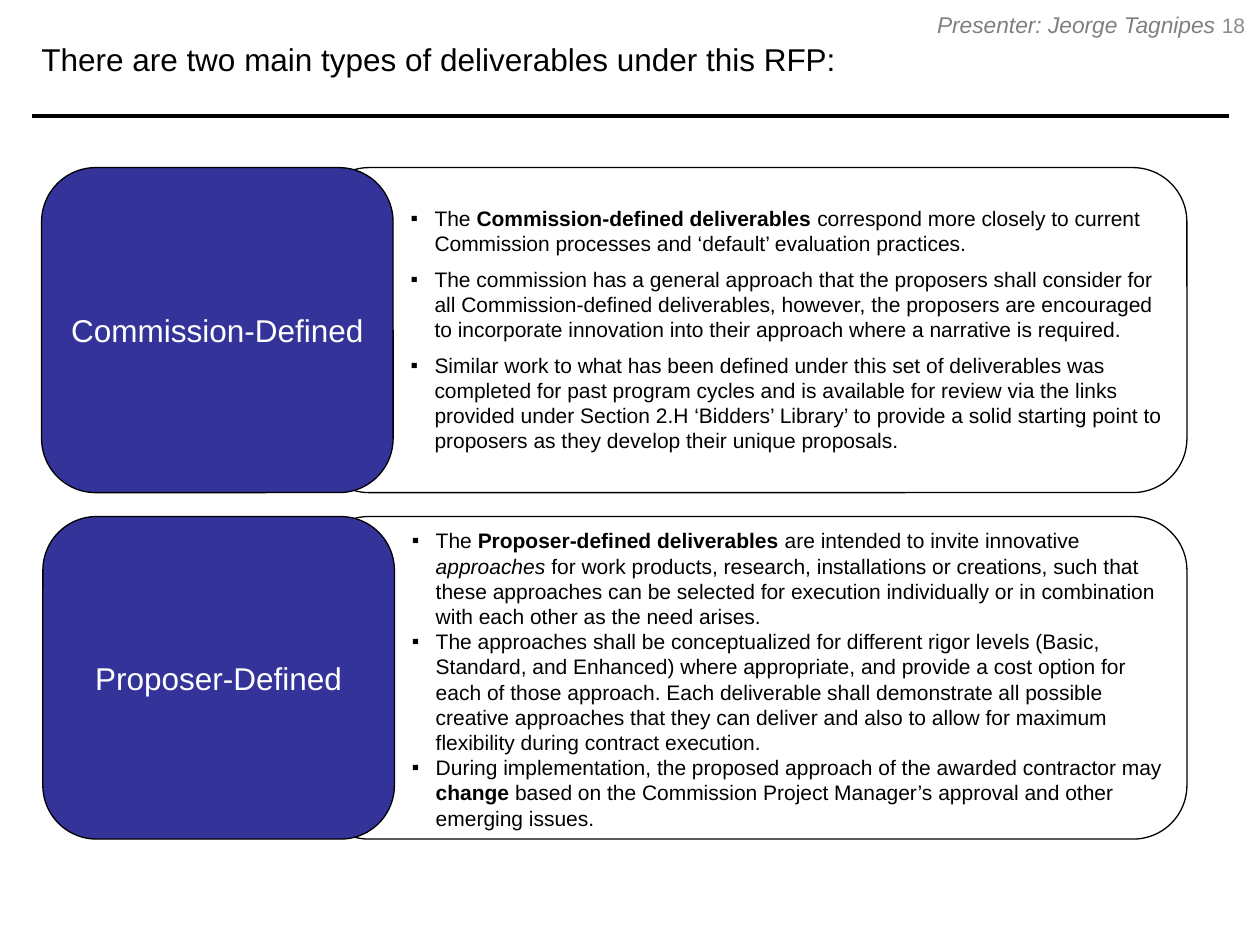
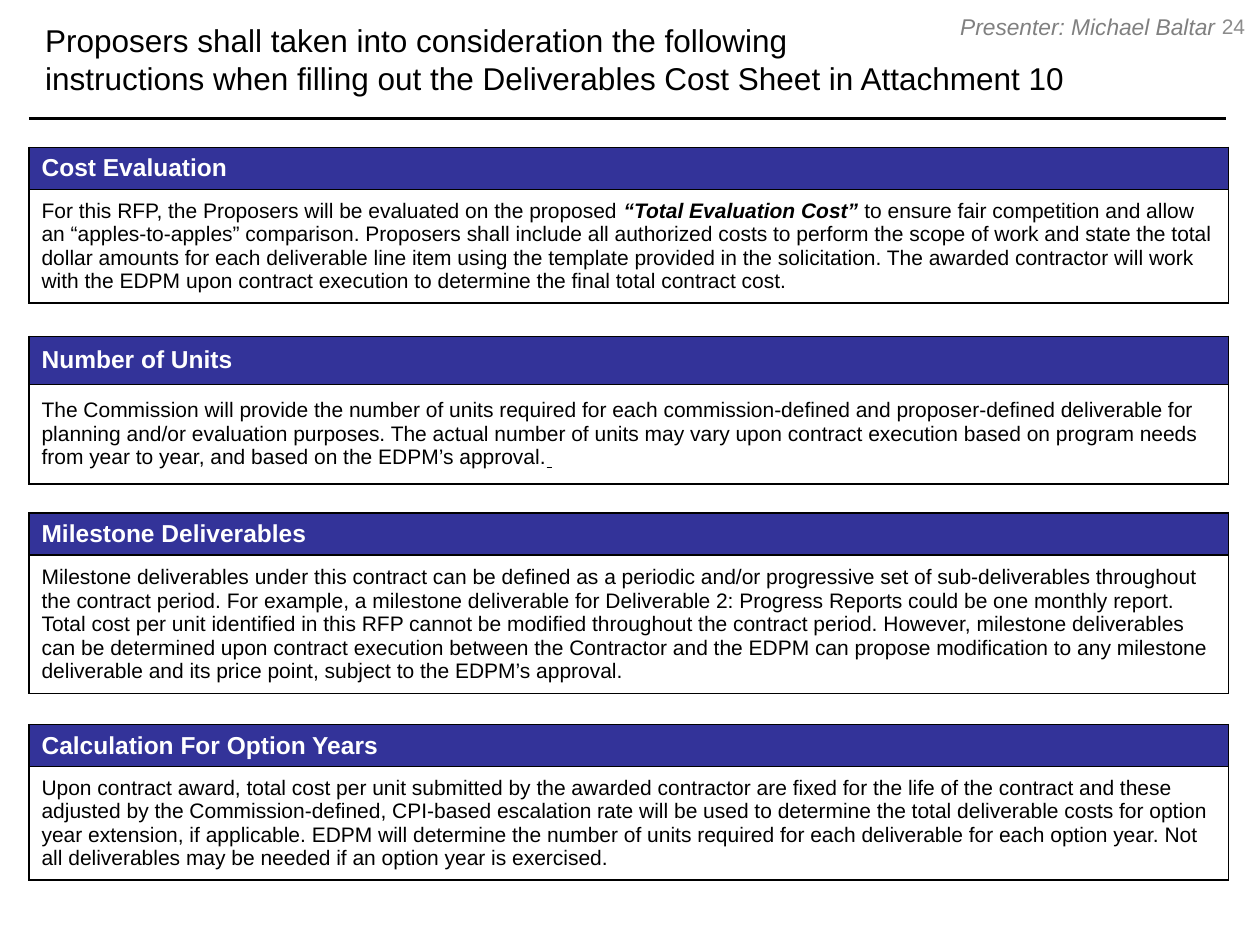
"""Build two RFP slides: deliverable types and cost sheet instructions."""
from lxml import etree
from pptx import Presentation
from pptx.dml.color import RGBColor
from pptx.enum.shapes import MSO_CONNECTOR, MSO_SHAPE
from pptx.enum.text import MSO_ANCHOR, PP_ALIGN
from pptx.oxml.ns import qn
from pptx.util import Inches, Pt

STRAIGHT = MSO_CONNECTOR.STRAIGHT
ROUNDED = MSO_SHAPE.ROUNDED_RECTANGLE
TOP, MIDDLE = MSO_ANCHOR.TOP, MSO_ANCHOR.MIDDLE
LEFT, CENTER, RIGHT = PP_ALIGN.LEFT, PP_ALIGN.CENTER, PP_ALIGN.RIGHT

FONT = "Arial"
COLORS = {"ink": "000000", "band": "333399", "white": "FFFFFF",
          "presenter": "808080", "number": "8C8C8C"}
FITTED_ROWS = (0.14, 0.64)

TYPES = [
    {"label": "Commission-Defined", "left": 0.33, "top": 1.33, "height": 2.58,
     "text_box": (3.16, 1.58, 6.25, 2.09), "after": 6,
     "bullets": [
         [("The ", ""), ("Commission-defined deliverables", "b"),
          (" correspond more closely to current Commission processes and "
           "‘default’ evaluation practices.", "")],
         [("The commission has a general approach that the proposers shall consider "
           "for all Commission-defined deliverables, however, the proposers are "
           "encouraged to incorporate innovation into their approach where a "
           "narrative is required.", "")],
         [("Similar work to what has been defined under this set of deliverables was "
           "completed for past program cycles and is available for review via the "
           "links provided under Section 2.H ‘Bidders’ Library’ to provide a solid "
           "starting point to proposers as they develop their unique proposals.", "")],
     ]},
    {"label": "Proposer-Defined", "left": 0.34, "top": 4.1, "height": 2.56,
     "text_box": (3.17, 4.14, 6.27, 2.52), "after": 0,
     "bullets": [
         [("The ", ""), ("Proposer-defined deliverables", "b"),
          (" are intended to invite innovative ", ""), ("approaches ", "i"),
          ("for work products, research, installations or creations, such that these "
           "approaches can be selected for execution individually or in combination "
           "with each other as the need arises.", "")],
         [("The approaches shall be conceptualized for different rigor levels (Basic, "
           "Standard, and Enhanced) where appropriate, and provide a cost option for "
           "each of those approach. Each deliverable shall demonstrate all possible "
           "creative approaches that they can deliver and also to allow for maximum "
           "flexibility during contract execution.", "")],
         [("During implementation, the proposed approach of the awarded contractor "
           "may ", ""), ("change", "b"),
          (" based on the Commission Project Manager’s approval and other emerging "
           "issues.", "")],
     ]},
]

INSTRUCTIONS = [
    ("Cost Evaluation", 1.17, FITTED_ROWS,
     [("For this RFP, the Proposers will be evaluated on the proposed ", ""),
      ("“Total Evaluation Cost”", "bi"),
      (" to ensure fair competition and allow an “apples-to-apples” comparison. "
       "Proposers shall include all authorized costs to perform the scope of work and "
       "state the total dollar amounts for each deliverable line item using the "
       "template provided in the solicitation. The awarded contractor will work with "
       "the EDPM upon contract execution to determine the final total contract cost.",
       "")]),
    ("Number of Units", 2.67, (0.38, 0.79),
     [("The Commission will provide the number of units required for each "
       "commission-defined and proposer-defined deliverable for planning and/or "
       "evaluation purposes. The actual number of units may vary upon contract "
       "execution based on program needs from year to year, and based on the EDPM’s "
       "approval.", ""), (" ", "u")]),
    ("Milestone Deliverables", 4.07, FITTED_ROWS,
     [("Milestone deliverables under this contract can be defined as a periodic and/or "
       "progressive set of sub-deliverables throughout the contract period. For "
       "example, a milestone deliverable for Deliverable 2: Progress Reports could be "
       "one monthly report. Total cost per unit identified in this RFP cannot be "
       "modified throughout the contract period. However, milestone deliverables can "
       "be determined upon contract execution between the Contractor and the EDPM can "
       "propose modification to any milestone deliverable and its price point, subject "
       "to the EDPM’s approval.", "")]),
    ("Calculation For Option Years", 5.75, FITTED_ROWS,
     [("Upon contract award, total cost per unit submitted by the awarded contractor "
       "are fixed for the life of the contract and these adjusted by the "
       "Commission-defined, CPI-based escalation rate will be used to determine the "
       "total deliverable costs for option year extension, if applicable. EDPM will "
       "determine the number of units required for each deliverable for each option "
       "year. Not all deliverables may be needed if an option year is exercised.",
       "")]),
]


def rgb(name):
    """Return the named palette colour."""
    return RGBColor.from_string(COLORS[name])


def add_runs(p, runs, size, color):
    """Add (text, style) runs, where style holds any of b, i and u."""
    for text, style in runs:
        r = p.add_run()
        r.text = text
        r.font.name, r.font.size = FONT, Pt(size)
        r.font.color.rgb = rgb(color)
        r.font.bold, r.font.italic = "b" in style, "i" in style
        r.font.underline = "u" in style


def add_text(s, box, paragraphs, size, color="ink", align=LEFT, anchor=MIDDLE):
    """Add a wrapped text box and return its paragraphs."""
    tf = s.shapes.add_textbox(*map(Inches, box)).text_frame
    tf.word_wrap, tf.vertical_anchor = True, anchor
    for i, runs in enumerate(paragraphs):
        p = tf.add_paragraph() if i else tf.paragraphs[0]
        p.alignment = align
        add_runs(p, runs, size, color)
    return tf.paragraphs


def add_bullets(s, box, paragraphs, after):
    """Add a text box whose paragraphs have square bullets."""
    for p in add_text(s, box, paragraphs, 12, anchor=TOP):
        p.space_after = Pt(after)
        pPr = p._p.get_or_add_pPr()
        pPr.set("marL", str(Inches(0.19)))
        pPr.set("indent", str(Inches(-0.19)))
        etree.SubElement(pPr, qn("a:buFont")).set("typeface", FONT)
        etree.SubElement(pPr, qn("a:buChar")).set("char", "▪")


def add_rule(s, left, top):
    """Draw the heavy rule below the title."""
    sp = s.shapes.add_connector(STRAIGHT, Inches(left), Inches(top),
                                Inches(left + 9.5), Inches(top))
    sp.line.color.rgb, sp.line.width = rgb("ink"), Pt(2)
    etree.SubElement(sp._element.spPr, qn("a:effectLst"))


def add_panel(s, box, label=None):
    """Add an outlined rounded panel, filled when it has a label."""
    sp = s.shapes.add_shape(ROUNDED, *map(Inches, box))
    sp.shadow.inherit = False
    sp.line.color.rgb, sp.line.width = rgb("ink"), Pt(0.75)
    if label is None:
        sp.fill.background()
        return
    sp.fill.solid()
    sp.fill.fore_color.rgb = rgb("band")
    tf = sp.text_frame
    tf.word_wrap, tf.vertical_anchor = True, MIDDLE
    p = tf.paragraphs[0]
    p.alignment = CENTER
    add_runs(p, [(label, "")], 18, "white")


def set_borders(cell):
    """Give a cell thin borders on all four sides."""
    tcPr = cell._tc.get_or_add_tcPr()
    for i, side in enumerate(("lnL", "lnR", "lnT", "lnB")):
        ln = etree.Element(qn(f"a:{side}"), w=str(Pt(1)))
        fill = etree.SubElement(ln, qn("a:solidFill"))
        etree.SubElement(fill, qn("a:srgbClr")).set("val", COLORS["ink"])
        tcPr.insert(i, ln)


def add_instruction(s, heading, top, heights, body):
    """Add a two-row table with a heading band over its body text."""
    table = s.shapes.add_table(2, 1, Inches(0.23), Inches(top), Inches(9.52),
                               Inches(sum(heights))).table
    table.first_row = table.horz_banding = False
    for row, height in zip(table.rows, heights):
        row.height = Inches(height)
    head, text = table.cell(0, 0), table.cell(1, 0)
    head.fill.solid()
    head.fill.fore_color.rgb = rgb("band")
    text.fill.background()
    add_runs(head.text_frame.paragraphs[0], [(heading, "b")], 14, "white")
    add_runs(text.text_frame.paragraphs[0], body, 12, "ink")
    for cell in (head, text):
        cell.vertical_anchor = MIDDLE
        set_borders(cell)


def add_slide(prs, title, title_left, rule, number, number_top, presenter, presenter_top):
    """Add a blank slide with title, rule, page number and presenter."""
    s = prs.slides.add_slide(prs.slide_layouts[6])
    add_rule(s, *rule)
    add_text(s, (title_left, 0, 9.45, 0.94), [[(t, "")] for t in title], 18)
    add_text(s, (9.58, number_top, 0.42, 0.4), [[(number, "")]], 12, "number", CENTER)
    add_text(s, (7, presenter_top, 2.74, 0.24),
             [[(f"Presenter: {presenter}", "i")]], 13, "presenter", RIGHT)
    return s


def main():
    """Build and save both slides."""
    prs = Presentation()
    prs.slide_width, prs.slide_height = Inches(10), Inches(7.5)

    s = add_slide(prs, ["There are two main types of deliverables under this RFP:"],
                  0.23, (0.25, 0.92), "18", 0, "Jeorge Tagnipes", 0.07)
    for kind in TYPES:
        top, height = kind["top"], kind["height"]
        add_panel(s, (2.5, top, 6.92, height))
        add_panel(s, (kind["left"], top, 2.79, height), kind["label"])
        add_bullets(s, kind["text_box"], kind["bullets"], kind["after"])

    s = add_slide(prs, ["Proposers shall taken into consideration the following",
                        "instructions when filling out the Deliverables Cost Sheet "
                        "in Attachment 10"],
                  0.26, (0.23, 0.94), "24", 0.01, "Michael Baltar", 0.09)
    for instruction in INSTRUCTIONS:
        add_instruction(s, *instruction)

    prs.save("out.pptx")


if __name__ == "__main__":
    main()
